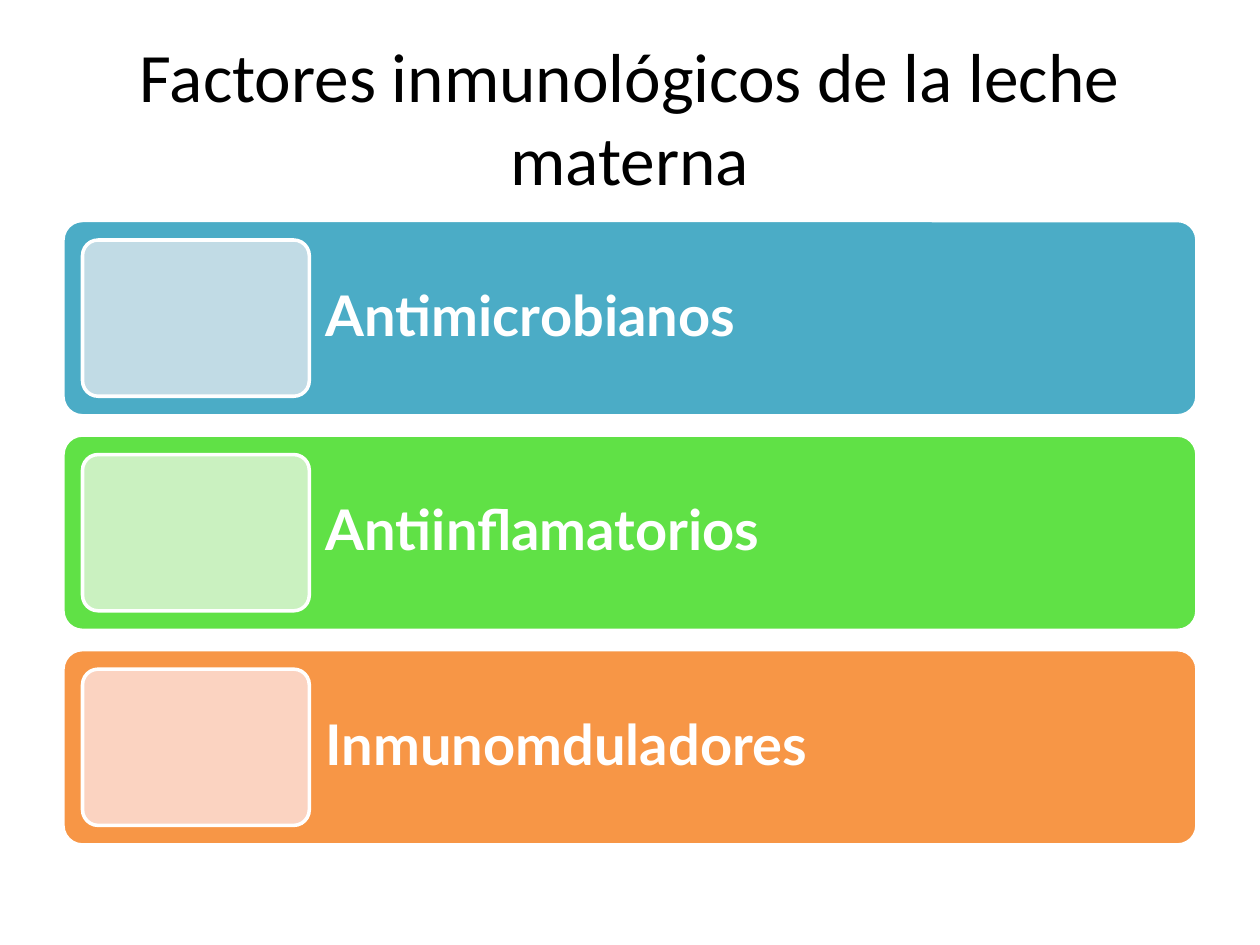
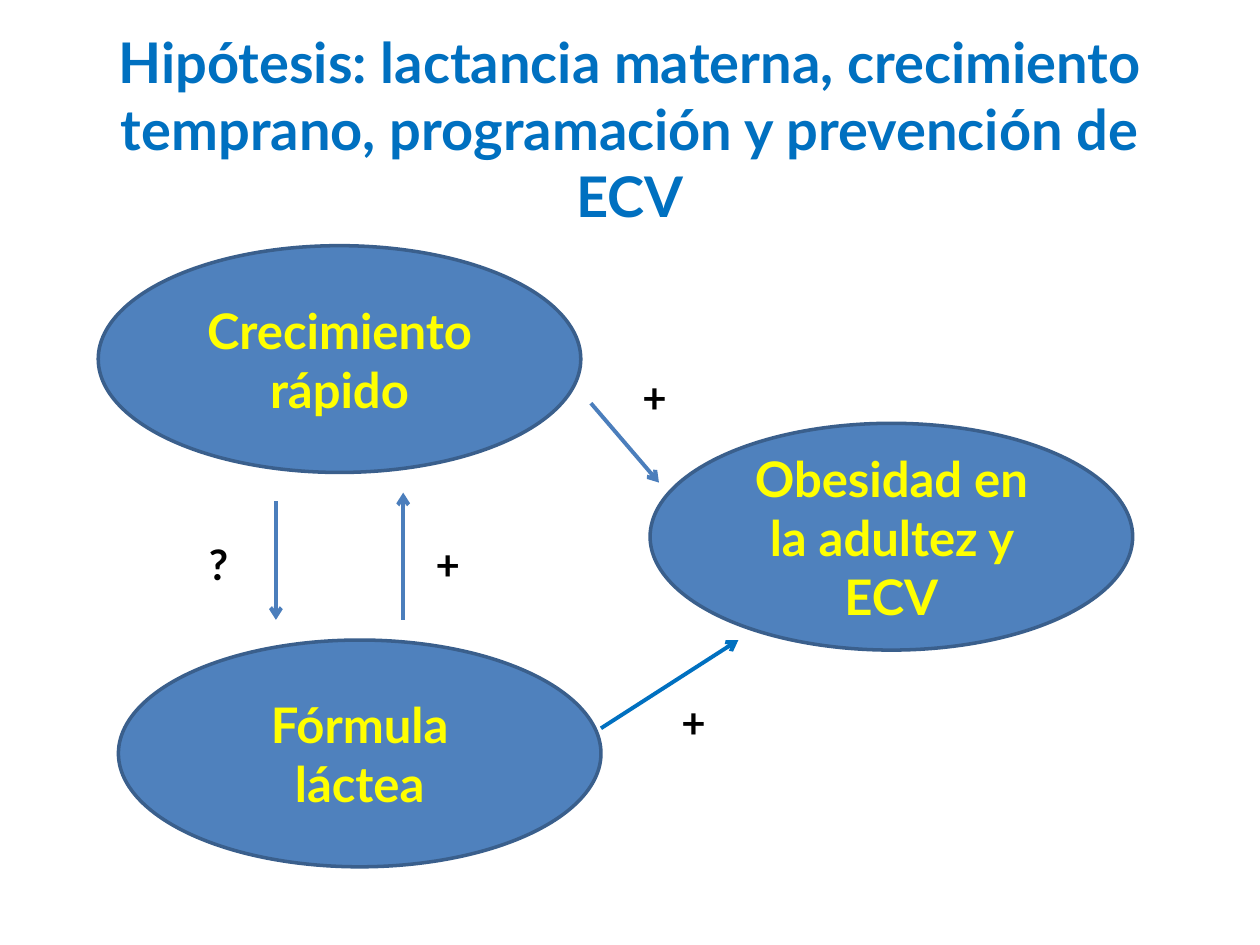
import pptx
import pptx.dml.color
import pptx.enum.shapes
import pptx.enum.text
import pptx.oxml.ns
import pptx.util
from lxml import etree

RGB = pptx.dml.color.RGBColor
SHAPE = pptx.enum.shapes.MSO_SHAPE
ALIGN = pptx.enum.text.PP_ALIGN
ANCHOR = pptx.enum.text.MSO_ANCHOR
qn = pptx.oxml.ns.qn

WHITE, BLACK, YELLOW = RGB(255, 255, 255), RGB(0, 0, 0), RGB(255, 255, 0)
TITLE_BLUE = RGB(0x00, 0x70, 0xC0)
OVAL_BLUE, OVAL_EDGE = RGB(0x4F, 0x81, 0xBD), RGB(0x3A, 0x5F, 0x8C)
ARROW_BLUE = RGB(0x4B, 0x7E, 0xBC)
TEAL, PALE_TEAL = RGB(0x4B, 0xAC, 0xC6), RGB(0xC1, 0xDB, 0xE5)
GREEN, PALE_GREEN = RGB(0x60, 0xE1, 0x46), RGB(0xCA, 0xF1, 0xC0)
ORANGE, PALE_ORANGE = RGB(0xF7, 0x96, 0x46), RGB(0xFB, 0xD3, 0xC1)

deck = pptx.Presentation()
deck.slide_width = pptx.util.Inches(10)
deck.slide_height = pptx.util.Inches(7.5)
blank = deck.slide_layouts[6]
CELL = deck.slide_width / 100  # square grid: 100 columns by 75 rows
TITLE_LEFT, TITLE_WIDTH, TITLE_HEIGHT = 5, 90, 12.5


def write(box, words, size, color, font="Lato", bold=True, align=ALIGN.CENTER, wrap=True):
    frame = box.text_frame
    frame.word_wrap = wrap
    frame.vertical_anchor = ANCHOR.MIDDLE
    frame.text = words
    paragraph = frame.paragraphs[0]
    paragraph.alignment = align
    letters = paragraph.runs[0].font
    letters.name, letters.size, letters.bold = font, pptx.util.Pt(size), bold
    letters.color.rgb = color


def add_outlined(slide, preset, area, fill, edge):
    """Add a shape over area (left, top, width, height in grid cells)."""
    shape = slide.shapes.add_shape(preset, *[round(n * CELL) for n in area])
    shape.shadow.inherit = False
    shape.fill.solid()
    shape.fill.fore_color.rgb = fill
    shape.line.color.rgb = edge
    shape.line.width = pptx.util.Pt(2)
    return shape


# Slide 1: immune factors
factors_slide = deck.slides.add_slide(blank)
title_area = (TITLE_LEFT, 3, TITLE_WIDTH, TITLE_HEIGHT)
title = factors_slide.shapes.add_textbox(*[round(n * CELL) for n in title_area])
write(title, "Factores inmunológicos de la leche materna", 39.6, BLACK, "Calibri", False)

BAR_LEFT, BAR_TOP, BAR_WIDTH, BAR_HEIGHT, BAR_GAP = 5, 17.5, 90, 15.5, 1.53
INSET, TILE_WIDTH = 1.55, 18
label_left = BAR_LEFT + INSET + TILE_WIDTH
factors = [
    ("Antimicrobianos", TEAL, PALE_TEAL),
    ("Antiinflamatorios", GREEN, PALE_GREEN),
    ("Inmunomduladores", ORANGE, PALE_ORANGE),
]
for index, (factor, strong, pale) in enumerate(factors):
    top = BAR_TOP + index * (BAR_HEIGHT + BAR_GAP)
    bar_area = (BAR_LEFT, top, BAR_WIDTH, BAR_HEIGHT)
    tile_area = (BAR_LEFT + INSET, top + INSET, TILE_WIDTH, BAR_HEIGHT - 2 * INSET)
    for area, fill in ((bar_area, strong), (tile_area, pale)):
        panel = add_outlined(factors_slide, SHAPE.ROUNDED_RECTANGLE, area, fill, WHITE)
        panel.adjustments[0] = 0.1
    label_area = (label_left, top, BAR_LEFT + BAR_WIDTH - label_left, BAR_HEIGHT)
    label = factors_slide.shapes.add_textbox(*[round(n * CELL) for n in label_area])
    write(label, factor, 32, WHITE, align=ALIGN.LEFT)
    label.text_frame.margin_left = label.text_frame.margin_right = round(1.3 * CELL)
    label.text_frame.margin_top = label.text_frame.margin_bottom = round(1.3 * CELL)
    label.text_frame.paragraphs[0].line_spacing = 0.9

# Slide 2: hypothesis diagram
hypothesis_slide = deck.slides.add_slide(blank)
title_area = (TITLE_LEFT, 3.9, TITLE_WIDTH, TITLE_HEIGHT)
title = hypothesis_slide.shapes.add_textbox(*[round(n * CELL) for n in title_area])
write(title, "Hipótesis: lactancia materna, crecimiento temprano, "
             "programación y prevención de ECV", 32, TITLE_BLUE)

OVAL_WIDTH, OVAL_HEIGHT = 38.3, 18
for concept, left, top in [
    ("Crecimiento rápido", 7.8, 19.5),
    ("Fórmula láctea", 9.4, 50.8),
    ("Obesidad en la adultez y ECV", 51.6, 33.6),
]:
    area = (left, top, OVAL_WIDTH, OVAL_HEIGHT)
    oval = add_outlined(hypothesis_slide, SHAPE.OVAL, area, OVAL_BLUE, OVAL_EDGE)
    write(oval, concept, 28, YELLOW)

for ends, color in [
    ((32, 49.2, 32, 39.1), ARROW_BLUE),
    ((21.9, 39.8, 21.9, 49.2), ARROW_BLUE),
    ((46.9, 32, 52.3, 38.3), ARROW_BLUE),
    ((47.7, 57.8, 58.6, 50.8), TITLE_BLUE),
]:
    arrow = hypothesis_slide.shapes.add_connector(
        pptx.enum.shapes.MSO_CONNECTOR.STRAIGHT, *[round(n * CELL) for n in ends])
    arrow.line.color.rgb = color
    arrow.line.width = pptx.util.Pt(2.25)
    etree.SubElement(arrow.line._get_or_add_ln(), qn("a:tailEnd"), type="arrow")
    etree.SubElement(arrow._element.spPr, qn("a:effectLst"))

for sign, left, top, width in [
    ("+", 53.1, 54.7, 4.8),
    ("+", 50, 28.9, 4.8),
    ("+", 33.6, 42.2, 4.8),
    ("?", 15.6, 42.2, 3.9),
]:
    effect = hypothesis_slide.shapes.add_textbox(
        *[round(n * CELL) for n in (left, top, width, 5.1)])
    write(effect, sign, 24, BLACK, align=ALIGN.LEFT, wrap=False)

deck.save("out.pptx")
